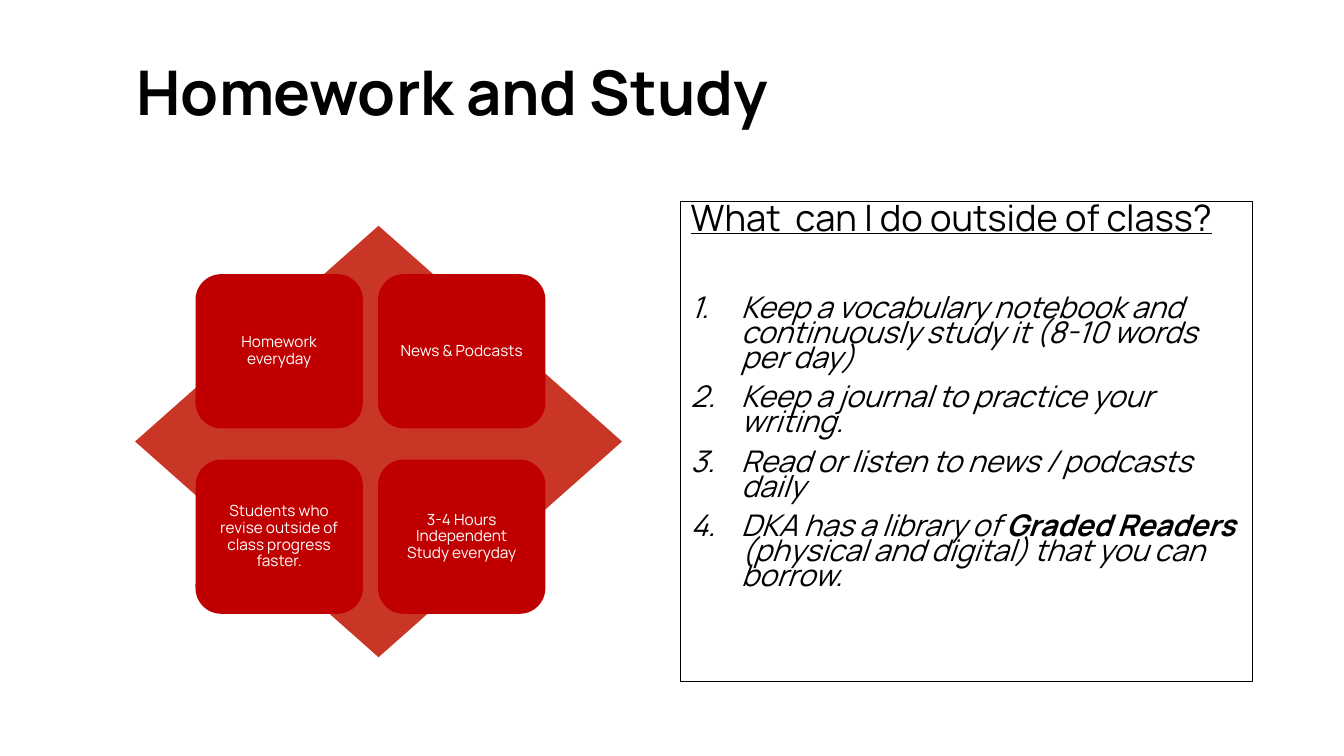
import pptx
import pptx.dml.color
import pptx.enum.shapes
import pptx.enum.text
import pptx.oxml.ns
import pptx.util
from lxml import etree

BLACK = pptx.dml.color.RGBColor(0x00, 0x00, 0x00)
WHITE = pptx.dml.color.RGBColor(0xFF, 0xFF, 0xFF)
BRICK = pptx.dml.color.RGBColor(0xCA, 0x36, 0x25)
RED = pptx.dml.color.RGBColor(0xC0, 0x00, 0x00)

SHAPES = pptx.enum.shapes.MSO_SHAPE
CENTER = pptx.enum.text.PP_ALIGN.CENTER
LEFT = pptx.enum.text.PP_ALIGN.LEFT
MIDDLE = pptx.enum.text.MSO_ANCHOR.MIDDLE
TOP = pptx.enum.text.MSO_ANCHOR.TOP

WIDTH, HEIGHT = pptx.util.Inches(13.33), pptx.util.Inches(7.5)

TITLE_FONT = {"name": "Manrope", "size": pptx.util.Pt(44), "bold": True}
HEADING_FONT = {"name": "Manrope", "size": pptx.util.Pt(25.9), "underline": True}
TIP_FONT = {"name": "Manrope", "size": pptx.util.Pt(21.3), "italic": True}
CARD_FONT = {"name": "Manrope", "size": pptx.util.Pt(11)}

CARDS = [
    ["Homework everyday", "News & Podcasts"],
    ["Students who revise outside of class progress faster.",
     "3-4 Hours Independent Study everyday"],
]
# Each tip is a list of (text, bold) spans.
TIPS = [
    [("Keep a vocabulary notebook and continuously study it (8-10 words per day)", False)],
    [("Keep a journal to practice your writing.", False)],
    [("Read or listen to news / podcasts daily", False)],
    [("DKA has a library of ", False), ("Graded Readers ", True),
     ("(physical and digital) that you can borrow.", False)],
]


def apply_format(target, values):
    for name, value in values.items():
        setattr(target, name, value)


def area(left, top, width, height):
    """Turn percentages of the slide into a position and size."""
    return {
        "left": int(WIDTH * left / 100), "top": int(HEIGHT * top / 100),
        "width": int(WIDTH * width / 100), "height": int(HEIGHT * height / 100),
    }


def add_span(para, text, font, color, **extra):
    span = para.add_run()
    span.text = text
    apply_format(span.font, {**font, **extra})
    span.font.color.rgb = color


def set_bullet(para, tag, indent=0.0, **attributes):
    """Set the bullet element and a hanging indent in inches."""
    properties = para._p.get_or_add_pPr()
    properties.set("marL", str(pptx.util.Inches(indent)))
    properties.set("indent", str(-pptx.util.Inches(indent)))
    etree.SubElement(properties, pptx.oxml.ns.qn(tag), attributes)


def format_frame(frame, anchor):
    apply_format(frame, {"word_wrap": True, "vertical_anchor": anchor,
                         "auto_size": pptx.enum.text.MSO_AUTO_SIZE.NONE})


def add_filled_shape(page, kind, place, color):
    shape = page.shapes.add_shape(kind, **place)
    shape.shadow.inherit = False
    shape.fill.solid()
    shape.fill.fore_color.rgb = color
    shape.line.fill.background()
    return shape


def add_card(page, row, column, text):
    place = area(14.55 + 13.58 * column, 36.27 + 24.53 * row, 12.45, 20.4)
    card = add_filled_shape(page, SHAPES.ROUNDED_RECTANGLE, place, RED)
    format_frame(card.text_frame, MIDDLE)
    para = card.text_frame.paragraphs[0]
    apply_format(para, {"alignment": CENTER, "line_spacing": 0.9})
    add_span(para, text, CARD_FONT, WHITE)


def fill_title(title, text):
    apply_format(title, area(6.9, 2.8, 53.56, 19.6))
    format_frame(title.text_frame, MIDDLE)
    para = title.text_frame.paragraphs[0]
    apply_format(para, {"alignment": CENTER, "line_spacing": 0.9})
    add_span(para, text, TITLE_FONT, BLACK)


def fill_tips(body, heading, tips):
    apply_format(body, area(50.64, 26.67, 42.54, 63.47))
    body.line.color.rgb = BLACK
    body.line.width = pptx.util.Pt(0.75)
    frame = body.text_frame
    format_frame(frame, TOP)

    para = frame.paragraphs[0]
    apply_format(para, {"alignment": LEFT, "line_spacing": 0.7,
                        "space_before": pptx.util.Pt(0)})
    set_bullet(para, "a:buNone")
    add_span(para, heading, HEADING_FONT, BLACK)

    for number, spans in enumerate(tips):
        para = frame.add_paragraph()
        gap = 10 if number else 44
        apply_format(para, {"alignment": LEFT, "line_spacing": 0.7,
                            "space_before": pptx.util.Pt(gap)})
        set_bullet(para, "a:buAutoNum", 0.5, type="arabicPeriod")
        for text, bold in spans:
            add_span(para, text, TIP_FONT, BLACK, bold=bold)


def main():
    deck = pptx.Presentation()
    apply_format(deck, {"slide_width": WIDTH, "slide_height": HEIGHT})
    page = deck.slides.add_slide(deck.slide_layouts.get_by_name("Title and Content"))

    fill_title(page.shapes.title, "Homework and Study")
    fill_tips(page.placeholders[1], "What  can I do outside of class?", TIPS)
    add_filled_shape(page, SHAPES.FLOWCHART_DECISION,
                     area(10.05, 29.87, 36.23, 57.07), BRICK)
    for row, texts in enumerate(CARDS):
        for column, text in enumerate(texts):
            add_card(page, row, column, text)

    deck.save("out.pptx")


if __name__ == "__main__":
    main()
